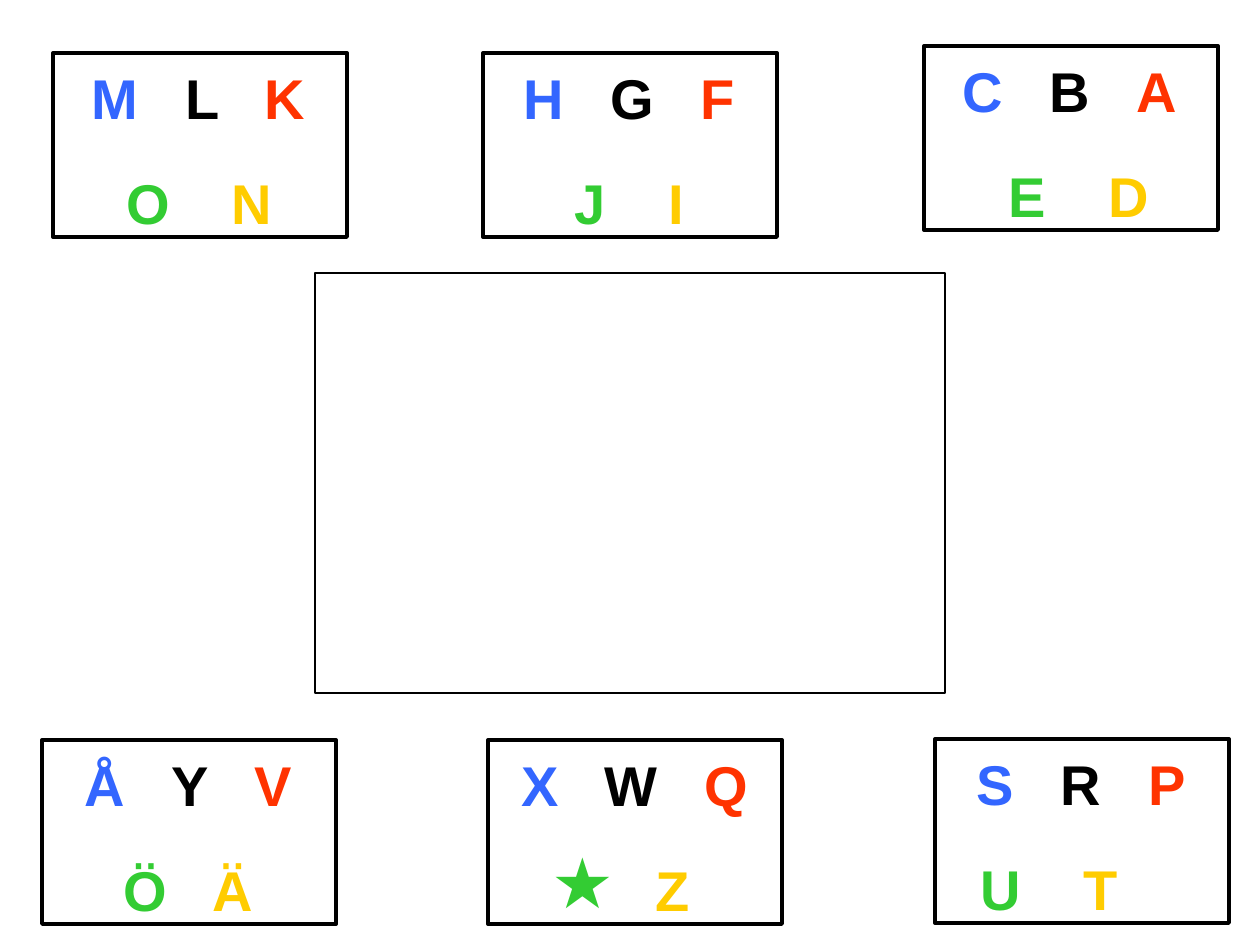
"""Build a letter board: six cards of coloured letters around an empty panel."""
from dataclasses import dataclass

from lxml import etree
from pptx import Presentation
from pptx import util as u
from pptx.dml.color import RGBColor
from pptx.enum import shapes, text
from pptx.oxml.ns import qn

PX = 914400 // 126


@dataclass(frozen=True)
class Theme:
    """Colours and type sizes."""
    font: str = "Arial"
    blue: str = "3366FF"
    black: str = "000000"
    red: str = "FF3300"
    green: str = "33CC33"
    yellow: str = "FFCC00"
    letter: int = 32
    star: int = 40
    row_gap: int = 22
    card_line: float = 2.25
    panel_line: float = 0.75


class Board:
    """Holds the theme and the current slide."""

    card_size = (294, 184)
    inset_x, inset_y = 13, 10

    def __init__(self, slide, theme):
        self.slide, self.theme = slide, theme

    def frame(self, x, y, w, h, weight):
        """Add an unfilled outlined rectangle."""
        sp = self.slide.shapes.add_shape(
            shapes.MSO_SHAPE.RECTANGLE, *(v * PX for v in (x, y, w, h)))
        sp.shadow.inherit = False
        sp.fill.background()
        sp.line.color.rgb = RGBColor.from_string(self.theme.black)
        sp.line.width = u.Pt(weight)
        return sp

    def run(self, p, content, color):
        """Add a coloured run to a paragraph."""
        r = p.add_run()
        r.text = content
        r.font.color.rgb = RGBColor.from_string(color)

    def style(self, p, size):
        """Set the paragraph's font."""
        p.alignment = text.PP_ALIGN.LEFT
        p.font.name, p.font.size, p.font.bold = self.theme.font, u.Pt(size), True

    def letters(self, p, row, colors):
        """Write letters, each centred on its own tab stop."""
        self.style(p, self.theme.letter)
        tabs = etree.Element(qn("a:tabLst"))
        for (letter, center), color in zip(row, colors):
            etree.SubElement(tabs, qn("a:tab"), algn="ctr",
                             pos=str((center - self.inset_x) * PX))
            self.run(p, "\t" + letter, color)
        p._p.get_or_add_pPr().find(qn("a:defRPr")).addprevious(tabs)

    def card(self, x, y, top, bottom):
        """Add a card with two rows of (letter, centre) pairs."""
        t = self.theme
        tf = self.frame(x, y, *self.card_size, t.card_line).text_frame
        tf.word_wrap = True
        tf.vertical_anchor = text.MSO_ANCHOR.TOP
        tf.margin_left = tf.margin_right = self.inset_x * PX
        tf.margin_top = tf.margin_bottom = self.inset_y * PX
        self.letters(tf.paragraphs[0], top, (t.blue, t.black, t.red))
        tf.paragraphs[0].space_after = u.Pt(t.row_gap)
        lower = (t.green, t.yellow)[-len(bottom):]
        self.letters(tf.add_paragraph(), bottom, lower)

    def star(self, x, y, w, h):
        """Add the star as text."""
        tf = self.slide.shapes.add_textbox(*(v * PX for v in (x, y, w, h))).text_frame
        tf.word_wrap = True
        p = tf.paragraphs[0]
        self.style(p, self.theme.star)
        self.run(p, "★", self.theme.green)


CARDS = [
    (53, 53, [("M", 62), ("L", 150), ("K", 232)], [("O", 95), ("N", 199)]),
    (483, 53, [("H", 61), ("G", 149), ("F", 235)], [("J", 107), ("I", 193)]),
    (924, 46, [("C", 59), ("B", 146), ("A", 233)], [("E", 103), ("D", 205)]),
    (42, 740, [("Å", 63), ("Y", 148), ("V", 231)], [("Ö", 103), ("Ä", 191)]),
    (935, 739, [("S", 60), ("R", 146), ("P", 232)], [("U", 66), ("T", 166)]),
    (488, 740, [("X", 52), ("W", 143), ("Q", 238)], [("Z", 185)]),
]


def main():
    prs = Presentation()
    prs.slide_width, prs.slide_height = u.Inches(10), u.Inches(7.5)
    board = Board(prs.slides.add_slide(prs.slide_layouts[6]), Theme())
    board.frame(315, 273, 630, 420, board.theme.panel_line)
    for card in CARDS:
        board.card(*card)
    board.star(539, 832, 96, 97)
    prs.save("out.pptx")


if __name__ == "__main__":
    main()
